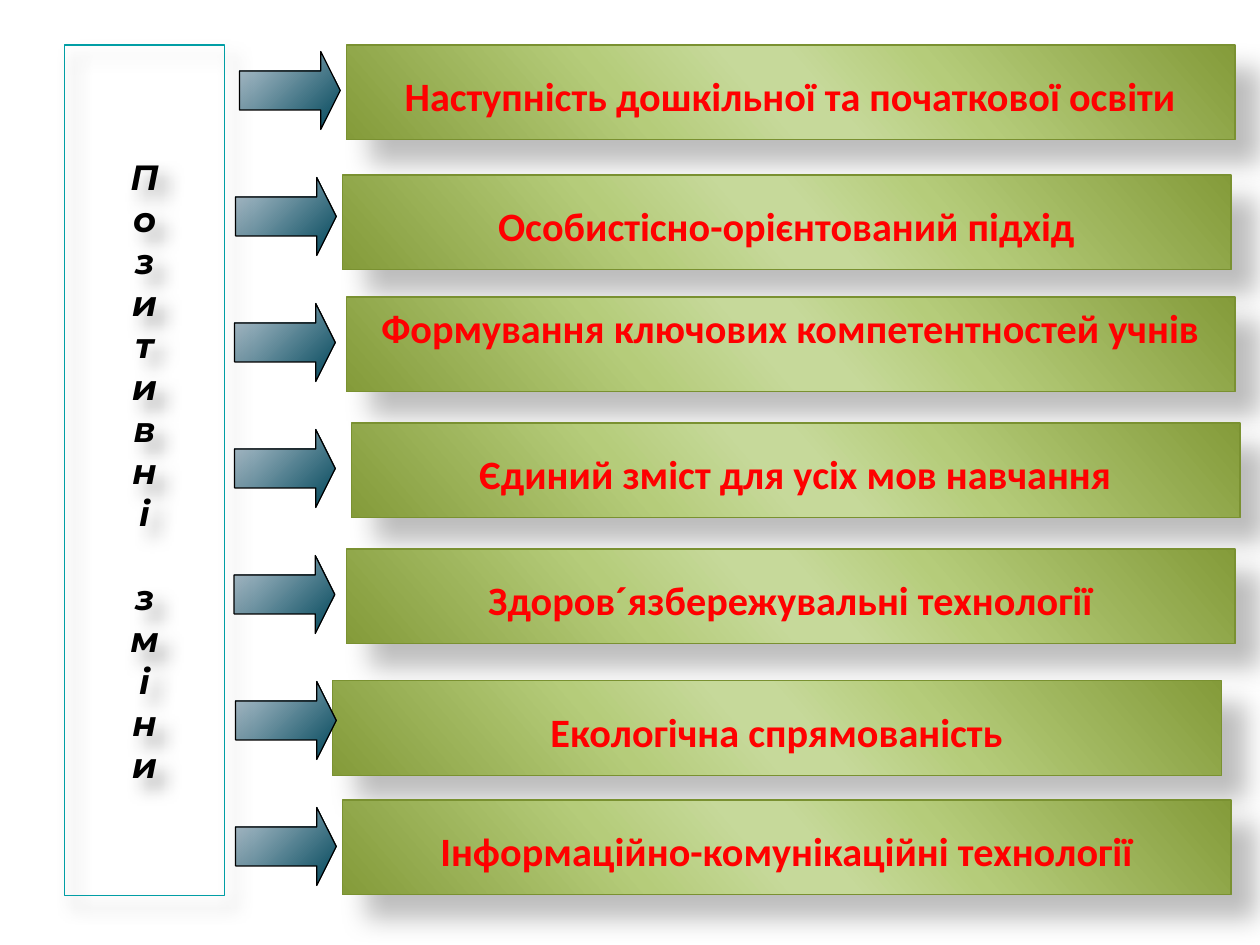
from pptx import Presentation
from pptx.dml.color import RGBColor
from pptx.enum.shapes import MSO_SHAPE
from pptx.enum.text import MSO_ANCHOR, PP_ALIGN
from pptx.oxml import parse_xml
from pptx.oxml.ns import nsdecls, qn
from pptx.util import Cm, Pt

COLORS = {
    "olive": "849B3A",
    "green": "B5CC7A",
    "light_green": "C6D99A",
    "bar_line": "7A9131",
    "arrow_light": "B7C6D1",
    "arrow_dark": "00465A",
    "panel_line": "019EA5",
    "red": "FF0000",
    "black": "000000",
    "white": "FFFFFF",
}
BAR_STOPS = [(0, "olive"), (33, "green"), (47, "light_green"),
             (53, "light_green"), (68, "green"), (100, "olive")]
ARROW_STOPS = [(0, "arrow_light"), (100, "arrow_dark")]
BAR_DIRECTION = f'<a:lin ang="{139 * 60000}" scaled="0"/>'
ARROW_DIRECTION = '<a:path path="circle"><a:fillToRect r="100000" b="100000"/></a:path>'

BAR_SIZE = (17.91, 1.91)
ARROW_SIZE = (2.03, 1.57)
ARROW_TOP, ARROW_PITCH = 1.04, 2.54
CHANGES = [
    ("Наступність дошкільної та початкової освіти", 6.99, 0.91, 0.53, 4.83),
    ("Особистісно-орієнтований підхід", 6.91, 3.53, 0.53, 4.75),
    ("Формування ключових компетентностей учнів", 6.99, 5.99, 0.13, 4.73),
    ("Єдиний зміст для усіх мов навчання", 7.09, 8.53, 0.53, 4.73),
    ("Здоров´язбережувальні технології", 6.99, 11.07, 0.53, 4.72),
    ("Екологічна спрямованість", 6.71, 13.72, 0.53, 4.75),
    ("Інформаційно-комунікаційні технології", 6.91, 16.13, 0.53, 4.75),
]


def add_outlined(slide, preset, box, line):
    """Add an unfilled, shadowless preset shape with a thin outline."""
    shape = slide.shapes.add_shape(preset, *(Cm(length) for length in box))
    shape.shadow.inherit = False
    shape.fill.background()
    shape.line.color.rgb = RGBColor.from_string(COLORS[line])
    shape.line.width = Pt(0.75)
    return shape


def set_gradient(shape, stops, direction):
    """Fill a shape with a gradient of (percent, colour name) stops."""
    listed = "".join(
        f'<a:gs pos="{percent * 1000}"><a:srgbClr val="{COLORS[name]}"/></a:gs>'
        for percent, name in stops)
    gradient = parse_xml(
        f'<a:gradFill {nsdecls("a")} rotWithShape="1">'
        f"<a:gsLst>{listed}</a:gsLst>{direction}</a:gradFill>")
    properties = shape.element.spPr
    properties.replace(properties.find(qn("a:noFill")), gradient)


def set_shadow(shape, opacity, blur, distance):
    """Cast a black shadow towards the lower right."""
    effects = shape.element.spPr.find(qn("a:effectLst"))
    effects.append(parse_xml(
        f'<a:outerShdw {nsdecls("a")} blurRad="{Pt(blur)}" dist="{Pt(distance)}"'
        f' dir="{45 * 60000}" algn="tl" rotWithShape="0">'
        f'<a:srgbClr val="{COLORS["black"]}"><a:alpha val="{opacity * 1000}"/>'
        "</a:srgbClr></a:outerShdw>"))


def write_text(shape, text, *, font, size, color, anchor, italic=False, wrap=True):
    """Write one centred bold paragraph and return its run."""
    frame = shape.text_frame
    frame.word_wrap = wrap
    frame.vertical_anchor = anchor
    paragraph = frame.paragraphs[0]
    paragraph.alignment = PP_ALIGN.CENTER
    run = paragraph.add_run()
    run.text = text
    run.font.name = font
    run.font.size = Pt(size)
    run.font.bold = True
    run.font.italic = italic
    run.font.color.rgb = RGBColor.from_string(COLORS[color])
    return run


def add_bar(slide, box, text, margin_top):
    """Add a green bar that names one change."""
    bar = add_outlined(slide, MSO_SHAPE.RECTANGLE, box, "bar_line")
    set_gradient(bar, BAR_STOPS, BAR_DIRECTION)
    set_shadow(bar, opacity=26, blur=15, distance=18)
    write_text(bar, text, font="Calibri", size=23, color="red", anchor=MSO_ANCHOR.TOP)
    bar.text_frame.margin_top = Cm(margin_top)


def add_arrow(slide, box):
    """Add an arrow that points to a bar."""
    arrow = add_outlined(slide, MSO_SHAPE.RIGHT_ARROW, box, "black")
    arrow.adjustments[0] = 0.5
    arrow.adjustments[1] = 0.25
    set_gradient(arrow, ARROW_STOPS, ARROW_DIRECTION)


def add_heading_panel(slide, box, text):
    """Add the tall panel with its heading in stacked letters."""
    panel = add_outlined(slide, MSO_SHAPE.RECTANGLE, box, "panel_line")
    set_shadow(panel, opacity=35, blur=10.2, distance=8)
    run = write_text(panel, text, font="Montserrat", size=20, color="black",
                     anchor=MSO_ANCHOR.MIDDLE, italic=True, wrap=False)
    panel.element.txBody.find(qn("a:bodyPr")).set("vert", "wordArtVert")
    properties = panel.element.txBody.find(f".//{qn('a:rPr')}")
    properties.set("spc", "-150")
    properties.insert(0, parse_xml(
        f'<a:ln {nsdecls("a")} w="{Pt(1.42)}"><a:solidFill>'
        f'<a:srgbClr val="{COLORS["white"]}"/></a:solidFill></a:ln>'))
    return run


def main():
    """Build and save the slide."""
    presentation = Presentation()
    presentation.slide_width, presentation.slide_height = Cm(25.4), Cm(19.05)
    slide = presentation.slides.add_slide(presentation.slide_layouts[6])
    for text, left, top, margin_top, _ in CHANGES:
        add_bar(slide, (left, top, *BAR_SIZE), text, margin_top)
    for row, (*_, left) in enumerate(CHANGES):
        add_arrow(slide, (left, ARROW_TOP + row * ARROW_PITCH, *ARROW_SIZE))
    add_heading_panel(slide, (1.3, 0.91, 3.23, 17.15), "Позитивні зміни")
    presentation.save("out.pptx")


if __name__ == "__main__":
    main()
